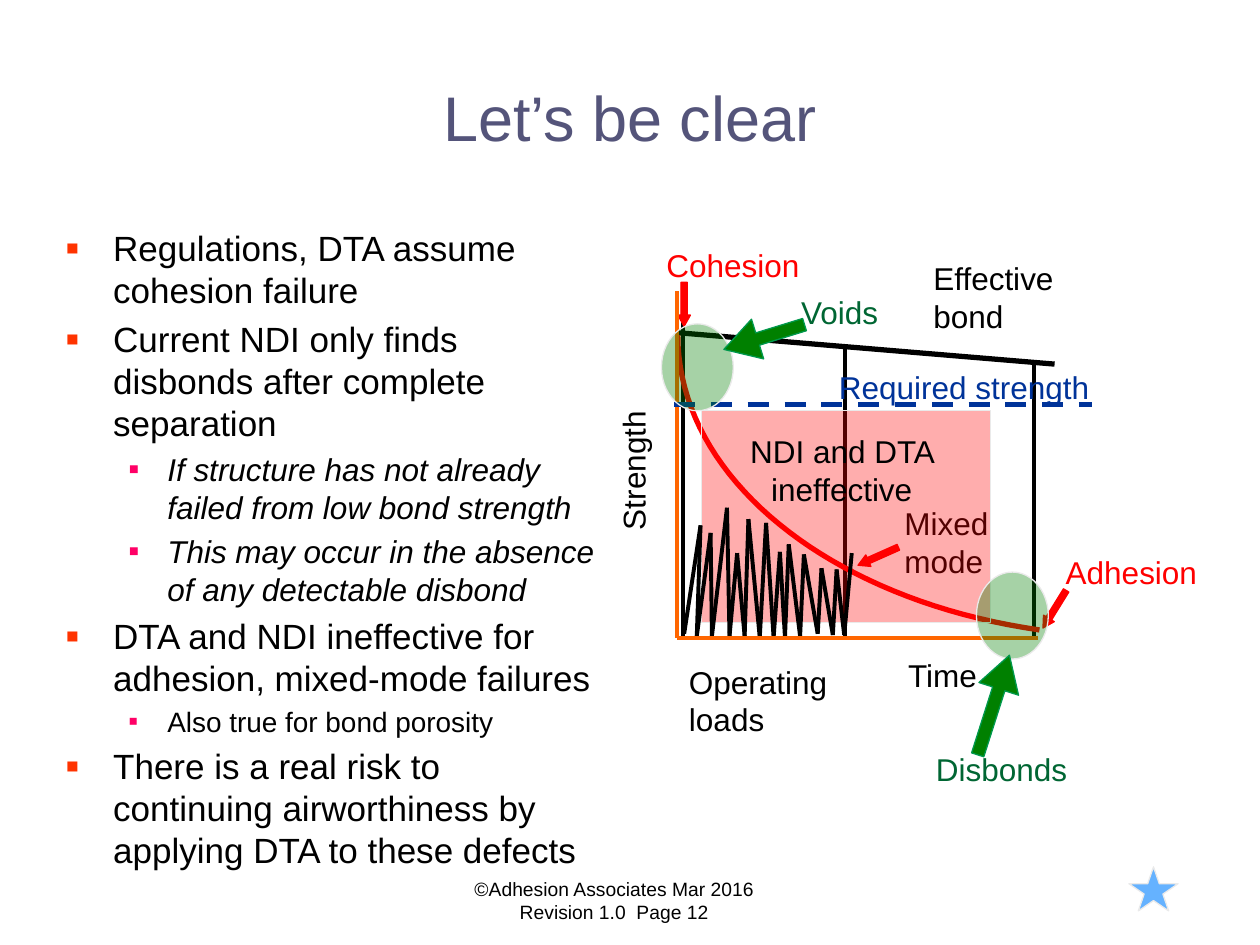
from itertools import pairwise

from lxml import etree
from pptx import Presentation
from pptx.dml.color import RGBColor
from pptx.enum.dml import MSO_LINE
from pptx.enum.shapes import MSO_CONNECTOR, MSO_SHAPE
from pptx.enum.text import MSO_ANCHOR, MSO_AUTO_SIZE, PP_ALIGN
from pptx.oxml.ns import qn
from pptx.util import Inches, Pt

STRAIGHT = MSO_CONNECTOR.STRAIGHT
ARROW, OVAL = MSO_SHAPE.DOWN_ARROW, MSO_SHAPE.OVAL
RECTANGLE, STAR = MSO_SHAPE.RECTANGLE, MSO_SHAPE.STAR_5_POINT
DASH = MSO_LINE.DASH
LEFT, CENTER = PP_ALIGN.LEFT, PP_ALIGN.CENTER
TOP, MIDDLE = MSO_ANCHOR.TOP, MSO_ANCHOR.MIDDLE
GROW = MSO_AUTO_SIZE.SHAPE_TO_FIT_TEXT

FONT = "Arial"
COLORS = {
    "black": "000000", "title": "54547A", "red": "FF0000", "orange": "FF6600",
    "navy": "003399", "green": "008000", "edge": "00994D", "forest": "006633",
    "pale": "EAEAEA", "sky": "65B2FF", "bullet": "FF3300", "subbullet": "FF0066",
}

TITLE = "Let’s be clear"
FOOTER = ["©Adhesion Associates Mar 2016", "Revision 1.0  Page 12"]
POINTS = [
    (0, "Regulations, DTA assume cohesion failure", 20, False),
    (0, "Current NDI only finds disbonds after complete separation", 20, False),
    (1, "If structure has not already failed from low bond strength", 18, True),
    (1, "This may occur in the absence of any detectable disbond", 18, True),
    (0, "DTA and NDI ineffective for adhesion, mixed-mode failures", 20, False),
    (1, "Also true for bond porosity", 16, False),
    (0, "There is a real risk to continuing airworthiness by applying DTA to these defects", 20, False),
]
LEVELS = [(0.38, 0.38, "bullet", 115), (0.81, 0.31, "subbullet", 100)]

BOND_LINES = [
    ((5.37, 2.64), (8.37, 2.89), "black", 3),
    ((5.42, 2.52), (5.42, 5.05), "black", 2.25),
    ((6.71, 2.76), (6.71, 5.06), "black", 2.25),
    ((8.21, 2.88), (8.21, 5.07), "black", 2.25),
]
AXES = [
    ((5.37, 2.31), (5.37, 5.06), "orange", 2.25),
    ((5.37, 5.06), (8.24, 5.06), "orange", 2.25),
]
REQUIRED_LINE = ((5.35, 3.21), (8.67, 3.21), "navy", 3)
STRENGTH_CURVE = [(8.25, 5), (6.58, 4.76), (5.38, 3.79), (5.38, 2.66)]
CURVE_STEPS = 40
LOADS = [
    (5.43, 5.03), (5.56, 4.17), (5.53, 5.05), (5.64, 4.23), (5.65, 5.05),
    (5.77, 4.03), (5.79, 5.05), (5.85, 4.39), (5.91, 5.05), (5.94, 4.12),
    (6.03, 5.06), (6.08, 4.15), (6.14, 5.06), (6.19, 4.38), (6.23, 5.06),
    (6.26, 4.32), (6.35, 5.05), (6.38, 4.4), (6.49, 5.03), (6.52, 4.51),
    (6.61, 5.04), (6.64, 4.52), (6.7, 5.04), (6.76, 4.39),
]

BACK_LABELS = [
    ("Effective\nbond", (7.31, 2.01, 1.16, 0.7), "black", 0),
    ("Cohesion", (5.19, 1.9, 1.27, 0.4), "red", 0),
    ("Mixed\nmode", (7.08, 3.95, 0.87, 0.7), "black", 0),
    ("Adhesion", (8.36, 4.34, 1.25, 0.4), "red", 0),
]
FRONT_LABELS = [
    ("Operating\nloads", (5.37, 5.21, 1.3, 0.7), "black", 0),
    ("Time", (7.11, 5.16, 0.76, 0.4), "black", 0),
    ("Strength", (4.45, 3.53, 1.15, 0.4), "black", 270),
    ("Required strength", (6.56, 2.87, 2.19, 0.4), "navy", 0),
    ("Voids", (6.26, 2.28, 0.85, 0.4), "forest", 0),
    ("Disbonds", (7.33, 5.9, 1.25, 0.4), "forest", 0),
]

RED_ARROW, GREEN_ARROW = (0.5, 0.893), (0.308, 0.849)
BACK_SHAPES = [
    (ARROW, (5.38, 2.24, 0.1, 0.35), "red", "red", 100, 0, RED_ARROW),
    (ARROW, (8.32, 4.66, 0.1, 0.35), "red", "red", 100, 31.7, RED_ARROW),
    (RECTANGLE, (5.57, 3.26, 2.29, 1.68), "red", "pale", 32, 0, ()),
    (STAR, (8.96, 6.88, 0.39, 0.35), "sky", "pale", 100, 0, ()),
    (ARROW, (6.92, 4.24, 0.1, 0.35), "red", "red", 100, 66, RED_ARROW),
]
FRONT_SHAPES = [
    (OVAL, (5.25, 2.57, 0.57, 0.69), "green", "pale", 35, 0, ()),
    (ARROW, (5.9, 2.34, 0.33, 0.67), "green", "edge", 100, 72.9, GREEN_ARROW),
    (OVAL, (7.75, 4.54, 0.57, 0.69), "green", "pale", 35, 0, ()),
    (ARROW, (7.72, 5.18, 0.33, 0.83), "green", "edge", 100, 197.7, GREEN_ARROW),
]


def rgb(name):
    return RGBColor.from_string(COLORS[name])


def style_font(para, size, color, italic=False):
    para.font.name, para.font.size, para.font.italic = FONT, Pt(size), italic
    para.font.color.rgb = rgb(color)


def add_text(page, frame, lines, size, color, align=LEFT, anchor=TOP):
    box = page.shapes.add_textbox(*map(Inches, frame))
    text = box.text_frame
    text.word_wrap, text.vertical_anchor = True, anchor
    for index, line in enumerate(lines):
        para = text.add_paragraph() if index else text.paragraphs[0]
        para.text, para.alignment = line, align
        style_font(para, size, color)
    return box


def add_bullet(para, level):
    indent, hanging, color, percent = LEVELS[level]
    props = para._p.get_or_add_pPr()
    props.set("marL", str(Inches(indent)))
    props.set("indent", str(-Inches(hanging)))
    tint = etree.SubElement(props, qn("a:buClr"))
    etree.SubElement(tint, qn("a:srgbClr"), val=COLORS[color])
    etree.SubElement(props, qn("a:buSzPct"), val=str(percent * 1000))
    etree.SubElement(props, qn("a:buFont"), typeface=FONT)
    etree.SubElement(props, qn("a:buChar"), char="▪")


def add_points(page):
    box = add_text(page, (0.42, 1.75, 4.5, 4.95), [point[1] for point in POINTS], 20, "black")
    for index, (para, point) in enumerate(zip(box.text_frame.paragraphs, POINTS)):
        level, _, size, italic = point
        para.level = level
        add_bullet(para, level)
        para.space_before = Pt(size * 0.2 if index else 0)
        style_font(para, size, "black", italic)


def add_line(page, start, end, color, width):
    line = page.shapes.add_connector(STRAIGHT, *map(Inches, start + end))
    line.line.color.rgb, line.line.width = rgb(color), Pt(width)
    etree.SubElement(line._element.spPr, qn("a:effectLst"))
    return line


def add_curve(page):
    points = []
    for step in range(CURVE_STEPS + 1):
        t = step / CURVE_STEPS
        weights = ((1 - t) ** 3, 3 * t * (1 - t) ** 2, 3 * t ** 2 * (1 - t), t ** 3)
        points.append(tuple(
            Inches(sum(w * value for w, value in zip(weights, axis)))
            for axis in zip(*STRENGTH_CURVE)))
    builder = page.shapes.build_freeform(*points[0])
    builder.add_line_segments(points[1:], close=False)
    curve = builder.convert_to_shape()
    curve.shadow.inherit = False
    curve.fill.background()
    curve.line.color.rgb, curve.line.width = rgb("red"), Pt(3)


def add_shape(page, kind, frame, fill, edge, opacity, turn, adjust):
    shape = page.shapes.add_shape(kind, *map(Inches, frame))
    shape.shadow.inherit = False
    shape.rotation = turn
    for index, value in enumerate(adjust):
        shape.adjustments[index] = value
    shape.fill.solid()
    shape.fill.fore_color.rgb = rgb(fill)
    shape.line.color.rgb, shape.line.width = rgb(edge), Pt(0.75)
    if opacity < 100:
        tint = shape._element.spPr.find(qn("a:solidFill"))[0]
        etree.SubElement(tint, qn("a:alpha"), val=str(opacity * 1000))


def add_labels(page, labels):
    for text, frame, color, turn in labels:
        label = add_text(page, frame, [text], 18, color)
        label.rotation = turn
        label.text_frame.word_wrap, label.text_frame.auto_size = False, GROW


deck = Presentation()
deck.slide_width, deck.slide_height = Inches(10), Inches(7.5)
page = deck.slides.add_slide(deck.slide_layouts[6])

add_text(page, (3.3, 6.91, 3.15, 0.52), FOOTER, 11, "black", CENTER)
add_text(page, (0.5, 0.3, 9, 1.25), [TITLE], 36, "title", CENTER, MIDDLE)
add_points(page)
for line in BOND_LINES:
    add_line(page, *line)
add_curve(page)
add_labels(page, BACK_LABELS)
for shape in BACK_SHAPES:
    add_shape(page, *shape)
add_text(page, (5.54, 3.38, 2.28, 0.7), ["NDI and DTA ineffective"], 18, "black", CENTER, MIDDLE)
for start, end in pairwise(LOADS):
    add_line(page, start, end, "black", 2.25)
for line in AXES:
    add_line(page, *line)
add_line(page, *REQUIRED_LINE).line.dash_style = DASH
add_labels(page, FRONT_LABELS)
for shape in FRONT_SHAPES:
    add_shape(page, *shape)

deck.save("out.pptx")
